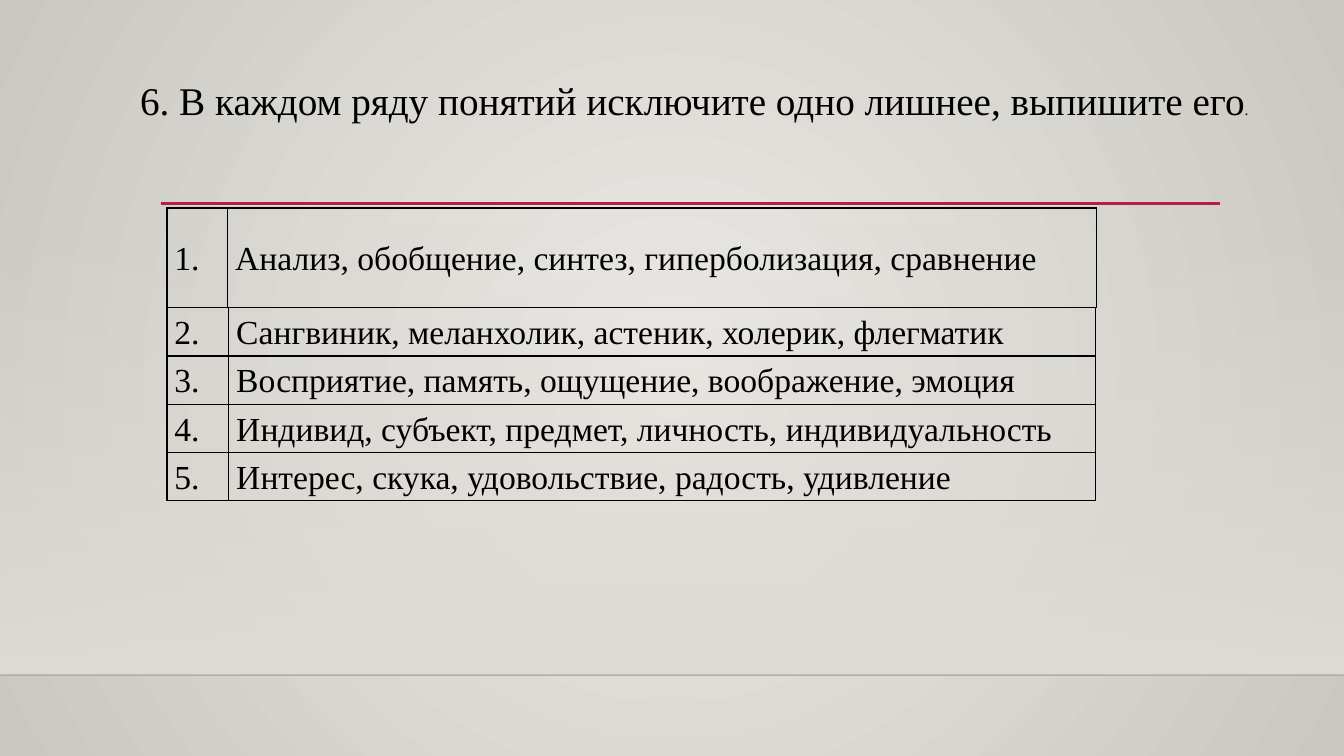
from pptx import Presentation
from pptx.dml.color import RGBColor
from pptx.enum.shapes import MSO_CONNECTOR, MSO_SHAPE
from pptx.enum.text import MSO_ANCHOR, MSO_AUTO_SIZE
from pptx.oxml import parse_xml
from pptx.oxml.ns import nsdecls, qn
from pptx.oxml.xmlchemy import OxmlElement
from pptx.util import Emu, Pt

WIDE, HIGH = 1280, 720
FONT = "Times New Roman"
INK = "000000"
ROWS = [
    "Анализ, обобщение, синтез, гиперболизация, сравнение",
    "Сангвиник, меланхолик, астеник, холерик, флегматик",
    "Восприятие, память, ощущение, воображение, эмоция",
    "Индивид, субъект, предмет, личность, индивидуальность",
    "Интерес, скука, удовольствие, радость, удивление",
]


def px(n):
    return Emu(n * 9525)


def color(code):
    return RGBColor.from_string(code)


def blend(fill, codes):
    fill.gradient()
    for stop, code, place in zip(fill.gradient_stops, codes, (0, 1)):
        stop.color.rgb = color(code)
        stop.position = place


def fade(node, percent):
    alpha = OxmlElement("a:alpha")
    alpha.set("val", str(percent * 1000))
    node.find(".//" + qn("a:srgbClr")).append(alpha)


def add_text(para, text, size):
    para.line_spacing = 1.07
    run = para.add_run()
    run.text = text
    run.font.name = FONT
    run.font.size = Pt(size)
    run.font.color.rgb = color(INK)


def add_rule(slide, left, top, width, code, weight):
    line = slide.shapes.add_connector(
        MSO_CONNECTOR.STRAIGHT, px(left), px(top), px(left + width), px(top))
    line.line.color.rgb = color(code)
    line.line.width = Pt(weight)
    props = line.element.spPr
    props.append(OxmlElement("a:effectLst"))
    return props


def add_back(slide):
    blend(slide.background.fill, ("ECEAE7", "CAC7C1"))
    grad = slide.element.find(".//" + qn("a:gradFill"))
    grad.replace(grad.find(qn("a:lin")), parse_xml(
        f'<a:path {nsdecls("a")} path="circle">'
        '<a:fillToRect l="50000" t="50000" r="50000" b="50000"/></a:path>'))


def add_floor(slide, left, top, width, height):
    glow = slide.shapes.add_shape(
        MSO_SHAPE.RECTANGLE, px(left), px(top), px(width), px(height))
    glow.shadow.inherit = False
    glow.line.fill.background()
    blend(glow.fill, ("DFDBD5", "DFDBD5"))
    glow.fill.gradient_angle = 270
    fade(glow.element.spPr, 0)
    fade(add_rule(slide, left, top + height, width, "000001", 1), 20)


def add_title(slide, left, top, width, height):
    frame = slide.shapes.add_textbox(
        px(left), px(top), px(width), px(height)).text_frame
    frame.word_wrap = True
    frame.auto_size = MSO_AUTO_SIZE.SHAPE_TO_FIT_TEXT
    para = frame.paragraphs[0]
    add_text(para, "6. В каждом ряду понятий исключите одно лишнее, выпишите его", 28)
    add_text(para, ".", 11)


def add_cell(cell, text):
    cell.margin_left = cell.margin_right = px(7)
    cell.margin_top = cell.margin_bottom = 0
    cell.vertical_anchor = MSO_ANCHOR.MIDDLE
    props = cell._tc.get_or_add_tcPr()
    for side in "LRTB":
        props.append(parse_xml(
            f'<a:ln{side} {nsdecls("a")} w="12700"><a:solidFill>'
            f'<a:srgbClr val="{INK}"/></a:solidFill></a:ln{side}>'))
    cell.fill.background()
    add_text(cell.text_frame.paragraphs[0], text, 24)


def add_list(slide, left, top, widths, height, first, items):
    grid = slide.shapes.add_table(
        len(items), 2, px(left), px(top),
        px(sum(widths)), px(height * len(items))).table
    grid.first_row = grid.horz_banding = False
    for col, width in zip(grid.columns, widths):
        col.width = px(width)
    for i, item in enumerate(items):
        grid.rows[i].height = px(height)
        add_cell(grid.cell(i, 0), f"{first + i}.")
        add_cell(grid.cell(i, 1), item)


def main():
    deck = Presentation()
    deck.slide_width, deck.slide_height = px(WIDE), px(HIGH)
    slide = deck.slides.add_slide(deck.slide_layouts[6])
    add_back(slide)
    add_floor(slide, 0, 212, WIDE, 431)
    add_rule(slide, 153, 194, 1009, "B71E42", 2.5)
    add_title(slide, 124, 65, 1090, 59)
    add_list(slide, 159, 198, (58, 827), 95, 1, ROWS[:1])
    add_list(slide, 159, 293, (59, 825), 46, 2, ROWS[1:])
    deck.save("out.pptx")


if __name__ == "__main__":
    main()
